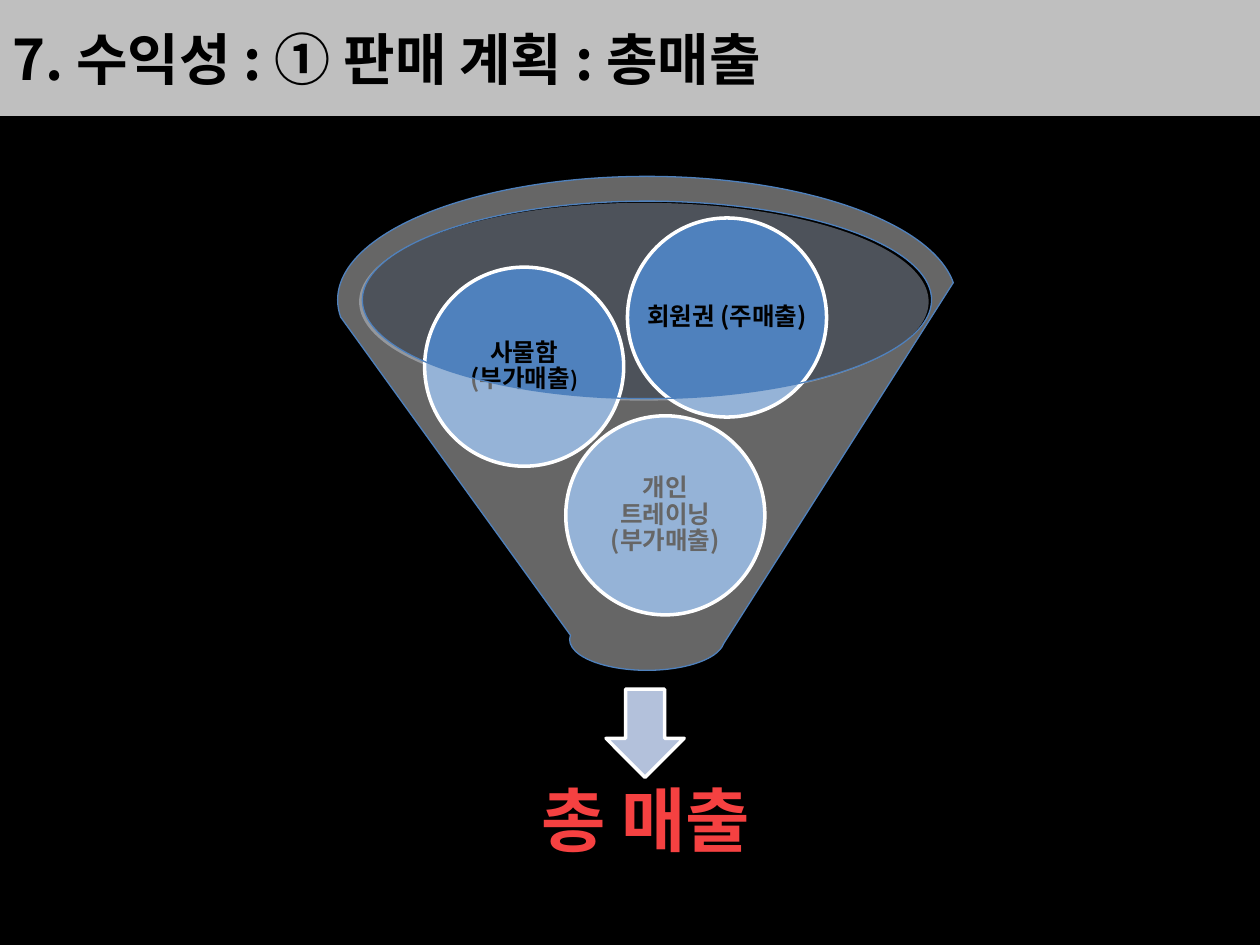
from copy import deepcopy
from dataclasses import dataclass
from typing import Optional

from lxml import etree
from pptx import Presentation
from pptx.dml.color import RGBColor
from pptx.enum.shapes import MSO_SHAPE
from pptx.enum.text import MSO_ANCHOR, PP_ALIGN
from pptx.oxml.ns import qn
from pptx.util import Inches, Pt

RECTANGLE = MSO_SHAPE.RECTANGLE
OVAL = MSO_SHAPE.OVAL
DOWN_ARROW = MSO_SHAPE.DOWN_ARROW
FUNNEL = MSO_SHAPE.FUNNEL
LEFT, CENTER = PP_ALIGN.LEFT, PP_ALIGN.CENTER
MIDDLE = MSO_ANCHOR.MIDDLE


@dataclass(frozen=True)
class Theme:
    font: str = "Noto Sans CJK KR"
    background: str = "000000"
    ink: str = "000000"
    band: str = "BFBFBF"
    rim: str = "C2CDE1"
    ball: str = "4F81BD"
    arrow: str = "B3C1DB"
    white: str = "FFFFFF"
    total: str = "F54141"
    title_size: int = 32
    total_size: int = 40
    ball_size: int = 14
    small_size: int = 12
    bold_line: float = 2
    thin_line: float = 0.75


THEME = Theme()


@dataclass(frozen=True)
class Box:
    left: float
    top: float
    width: float
    height: float

    def lengths(self) -> tuple:
        return tuple(Inches(value) for value in (self.left, self.top, self.width, self.height))


@dataclass(frozen=True)
class Piece:
    text: str
    size: int


@dataclass(frozen=True)
class RevenueBall:
    left: float
    top: float
    lines: tuple


BALL_DIAMETER = 1.58
REVENUE_BALLS = (
    RevenueBall(4.49, 3.3, (
        (Piece("개인", THEME.ball_size),),
        (Piece("트레이닝", THEME.ball_size),),
        (Piece("(부가매출)", THEME.ball_size),),
    )),
    RevenueBall(3.37, 2.12, (
        (Piece("사물함", THEME.ball_size),),
        (Piece("(부가매출", THEME.ball_size), Piece(")", THEME.small_size)),
    )),
    RevenueBall(4.98, 1.73, ((Piece("회원권 (주매출)", THEME.ball_size),),)),
)


def set_attributes(target, values: dict) -> None:
    for name, value in values.items():
        setattr(target, name, value)


def add_figure(slide, kind, box: Box, fill: str, line: Optional[str] = None,
               line_width: float = 0, opacity: int = 100):
    shape = slide.shapes.add_shape(kind, *box.lengths())
    shape.shadow.inherit = False
    shape.fill.solid()
    shape.fill.fore_color.rgb = RGBColor.from_string(fill)
    if opacity < 100:
        color = shape.fill._xPr.find(qn("a:solidFill"))[0]
        etree.SubElement(color, qn("a:alpha"), val=str(opacity * 1000))
    if line:
        shape.line.color.rgb = RGBColor.from_string(line)
        shape.line.width = Pt(line_width)
    else:
        shape.line.fill.background()
    return shape


def write_text(shape, lines: tuple, color: str, alignment=CENTER, spacing: float = 0.9,
               margin: float = 0.02, wrap: bool = False) -> None:
    frame = shape.text_frame
    set_attributes(frame, {
        "word_wrap": wrap,
        "vertical_anchor": MIDDLE,
        **{f"margin_{side}": Inches(margin) for side in ("left", "right", "top", "bottom")},
    })
    paragraph = frame.paragraphs[0]
    set_attributes(paragraph, {"alignment": alignment, "line_spacing": spacing})
    for index, pieces in enumerate(lines):
        if index:
            paragraph.add_line_break()
        for piece in pieces:
            run = paragraph.add_run()
            run.text = piece.text
            set_attributes(run.font, {"name": THEME.font, "size": Pt(piece.size), "bold": True})
            run.font.color.rgb = RGBColor.from_string(color)
            properties = run._r.get_or_add_rPr()
            etree.SubElement(properties, qn("a:ea"), typeface=THEME.font)
    first_properties = paragraph.runs[0]._r.get_or_add_rPr()
    for line_break in paragraph._p.findall(qn("a:br")):
        line_break.append(deepcopy(first_properties))


def add_title(slide) -> None:
    band = add_figure(slide, RECTANGLE, Box(0, 0, 10, 0.92), THEME.band)
    title = Piece("7. 수익성 : ① 판매 계획 : 총매출", THEME.title_size)
    write_text(band, ((title,),), THEME.ink, LEFT, spacing=1.0, margin=0.1, wrap=True)


def add_revenue_ball(slide, ball: RevenueBall) -> None:
    box = Box(ball.left, ball.top, BALL_DIAMETER, BALL_DIAMETER)
    circle = add_figure(slide, OVAL, box, THEME.ball, THEME.white, THEME.bold_line)
    write_text(circle, ball.lines, THEME.ink)


def add_total(slide) -> None:
    label = slide.shapes.add_textbox(*Box(3.02, 6.01, 4.21, 1.05).lengths())
    write_text(label, ((Piece("총 매출", THEME.total_size),),), THEME.total,
               margin=0.31, wrap=True)


def main() -> None:
    presentation = Presentation()
    set_attributes(presentation, {"slide_width": Inches(10), "slide_height": Inches(7.5)})
    slide = presentation.slides.add_slide(presentation.slide_layouts[6])
    slide.background.fill.solid()
    slide.background.fill.fore_color.rgb = RGBColor.from_string(THEME.background)

    add_title(slide)
    add_figure(slide, OVAL, Box(2.85, 1.61, 4.52, 1.57), THEME.rim, opacity=40)
    add_figure(slide, DOWN_ARROW, Box(4.81, 5.47, 0.62, 0.7), THEME.arrow,
               THEME.white, THEME.bold_line)
    add_total(slide)
    for ball in REVENUE_BALLS:
        add_revenue_ball(slide, ball)
    add_figure(slide, FUNNEL, Box(2.68, 1.4, 4.91, 3.92), THEME.white,
               THEME.ball, THEME.thin_line, opacity=40)

    presentation.save("out.pptx")


if __name__ == "__main__":
    main()
